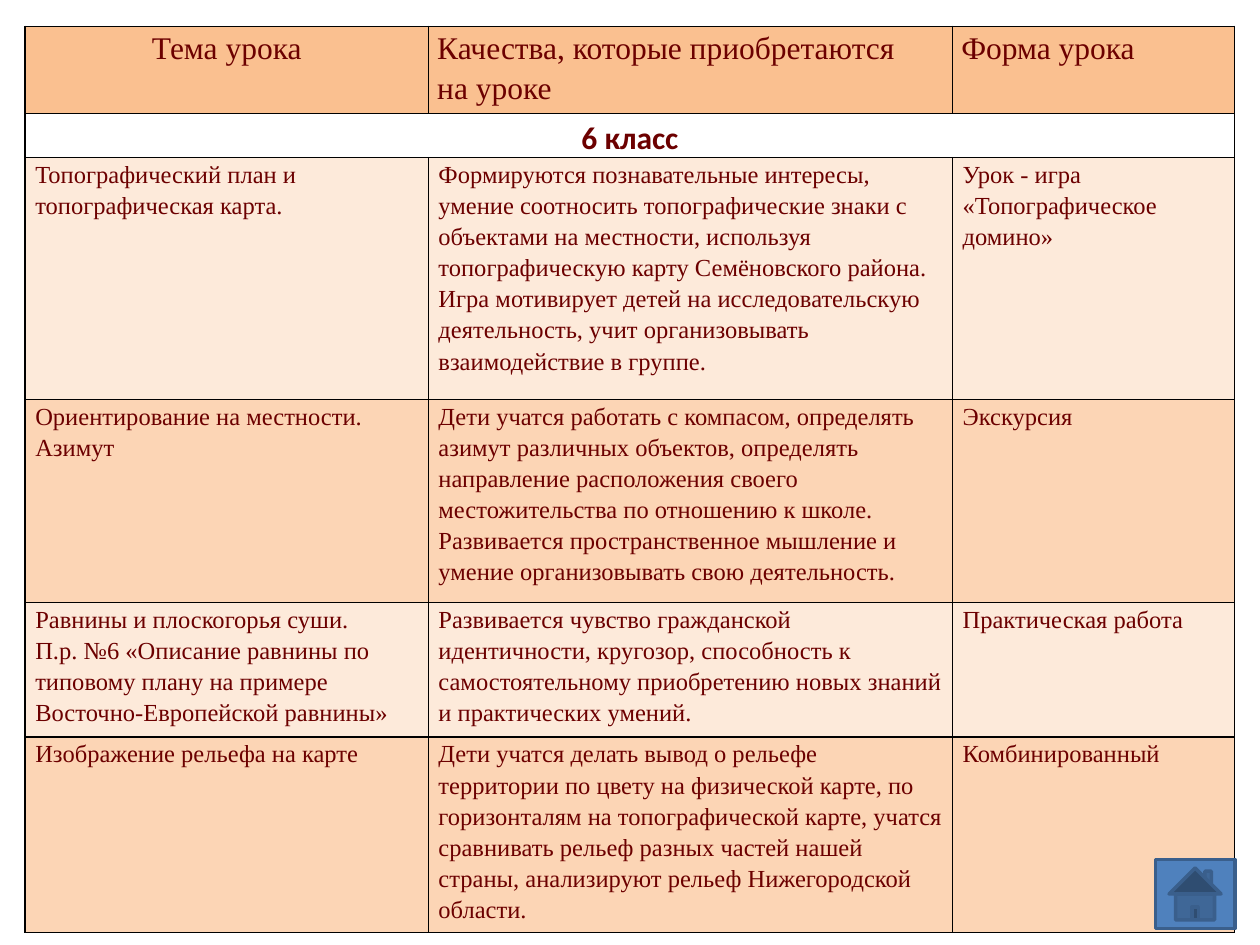
from pptx import Presentation
from pptx.dml.color import RGBColor as Color
from pptx.enum.shapes import MSO_SHAPE as Shape
from pptx.enum.text import PP_ALIGN as Align
from pptx.oxml import parse_xml
from pptx.oxml.ns import nsdecls
from pptx.util import Inches, Pt

THEME = {
    "text": Color.from_string("6C0000"),
    "header": Color.from_string("FAC090"),
    "section": Color.from_string("FFFFFF"),
    "light": Color.from_string("FDEADA"),
    "dark": Color.from_string("FCD5B5"),
    "button": Color.from_string("4F81BD"),
    "button_line": Color.from_string("3A5F8C"),
    "border": "000000",
    "large": Pt(18),
    "small": Pt(14),
    "serif": "Times New Roman",
    "sans": "Calibri",
}

COLUMN_WIDTHS = [3.2, 4.16, 2.24]
ROW_HEIGHTS = [0.69, 0.35, 1.92, 1.61, 1.07, 1.55]
ROW_FILLS = ["header", "section", "light", "dark", "light", "dark"]
LESSONS = [
    ["Тема урока", "Качества, которые приобретаются\vна уроке", "Форма урока"],
    ["6 класс"],
    [
        "Топографический план и топографическая карта.",
        "Формируются познавательные интересы, умение соотносить топографические знаки "
        "с объектами на местности, используя топографическую карту Семёновского района. "
        "Игра мотивирует детей на исследовательскую деятельность, учит организовывать "
        "взаимодействие в группе.",
        "Урок - игра «Топографическое домино»",
    ],
    [
        "Ориентирование на местности. Азимут",
        "Дети учатся работать с компасом, определять азимут различных объектов, "
        "определять направление расположения своего местожительства по отношению к школе. "
        "Развивается пространственное мышление и умение организовывать свою деятельность.",
        "Экскурсия",
    ],
    [
        "Равнины и плоскогорья суши.\n"
        "П.р. №6 «Описание равнины по типовому плану на примере "
        "Восточно-Европейской равнины»",
        "Развивается чувство гражданской идентичности, кругозор, способность к "
        "самостоятельному приобретению новых знаний и практических умений.",
        "Практическая работа",
    ],
    [
        "Изображение рельефа на карте",
        "Дети учатся делать вывод о рельефе территории по цвету на физической карте, "
        "по горизонталям на топографической карте, учатся сравнивать рельеф разных "
        "частей нашей страны, анализируют рельеф Нижегородской области.",
        "Комбинированный",
    ],
]


def set_values(target, values):
    for name, value in values.items():
        setattr(target, name, value)


def add_borders(cell):
    properties = cell._tc.get_or_add_tcPr()
    for position, side in enumerate(["lnL", "lnR", "lnT", "lnB"]):
        border = parse_xml(
            f'<a:{side} {nsdecls("a")} w="{Pt(1)}"><a:solidFill>'
            f'<a:srgbClr val="{THEME["border"]}"/></a:solidFill></a:{side}>'
        )
        properties.insert(position, border)


deck = Presentation()
set_values(deck, {"slide_width": Inches(10), "slide_height": Inches(7.5)})
page = deck.slides.add_slide(deck.slide_layouts[6])

table = page.shapes.add_table(
    len(ROW_HEIGHTS), len(COLUMN_WIDTHS),
    Inches(0.2), Inches(0.21), Inches(9.6), Inches(7.19),
).table
set_values(table, {"first_row": False, "horz_banding": False})
for column, width in zip(table.columns, COLUMN_WIDTHS):
    column.width = Inches(width)
for row, height in zip(table.rows, ROW_HEIGHTS):
    row.height = Inches(height)
table.cell(1, 0).merge(table.cell(1, 2))

for row_index, (row, fill_name) in enumerate(zip(table.rows, ROW_FILLS)):
    is_heading = row_index < 2
    is_section = row_index == 1
    margin = Inches(0.07 if is_heading else 0.08)
    margins = {"margin_left": margin, "margin_right": margin,
               "margin_top": 0, "margin_bottom": 0}
    font_format = {
        "name": THEME["sans" if is_section else "serif"],
        "size": THEME["large" if is_heading else "small"],
        "bold": is_section,
    }
    for cell in row.cells:
        set_values(cell, margins)
        cell.fill.solid()
        cell.fill.fore_color.rgb = THEME[fill_name]
        add_borders(cell)
    for column_index, text in enumerate(LESSONS[row_index]):
        frame = row.cells[column_index].text_frame
        frame.text = text
        centered = is_heading and column_index == 0
        for para in frame.paragraphs:
            set_values(para, {"line_spacing": 1.15,
                              "alignment": Align.CENTER if centered else Align.LEFT})
            for span in para.runs:
                set_values(span.font, font_format)
                span.font.color.rgb = THEME["text"]

home_button = page.shapes.add_shape(
    Shape.ACTION_BUTTON_HOME, Inches(9.17), Inches(6.82), Inches(0.63), Inches(0.55)
)
home_button.shadow.inherit = False
home_button.fill.solid()
home_button.fill.fore_color.rgb = THEME["button"]
home_button.line.color.rgb = THEME["button_line"]
home_button.line.width = Pt(2)

deck.save("out.pptx")
